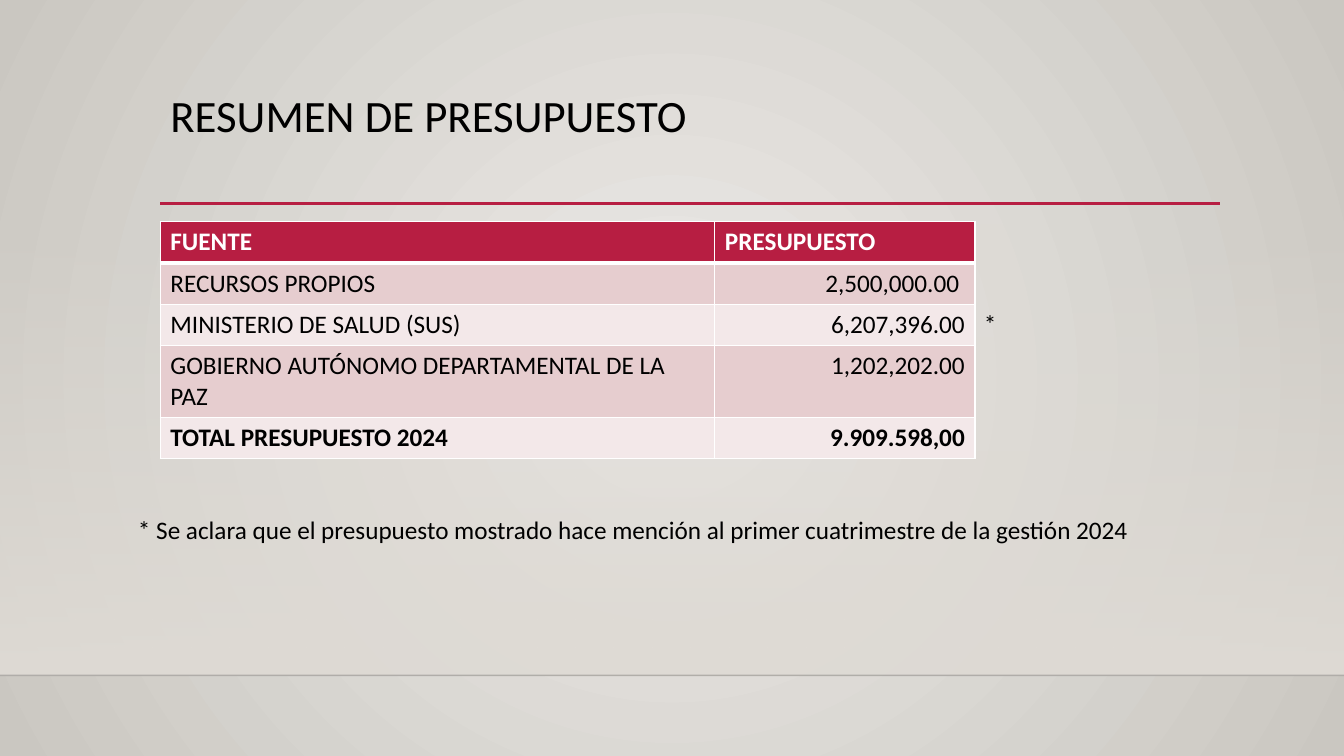
from lxml.etree import SubElement
from pptx import Presentation
from pptx.dml.color import RGBColor
from pptx.enum.shapes import MSO_CONNECTOR, MSO_SHAPE
from pptx.enum.text import MSO_ANCHOR, MSO_AUTO_SIZE, PP_ALIGN
from pptx.oxml.ns import qn
from pptx.util import Inches, Pt


def color(value):
    return RGBColor.from_string(value)


class BudgetSlide:
    font = "Calibri"
    black = "000000"
    white = "FFFFFF"
    accent = "B71E42"
    bands = ("E6CDCF", "F3E8E9")

    def __init__(self, presentation):
        self.slide = presentation.slides.add_slide(presentation.slide_layouts[5])

    def add_text(self, paragraph, text, size=18, ink=black, bold=False):
        run = paragraph.add_run()
        run.text = text
        run.font.name = self.font
        run.font.size = Pt(size)
        run.font.bold = bold
        run.font.color.rgb = color(ink)

    def set_gradient(self, fill, start, end):
        fill.gradient()
        for stop, value, position in zip(fill.gradient_stops, (start, end), (0, 1)):
            stop.color.rgb = color(value)
            stop.position = position

    def set_alpha(self, element, percent):
        rgb = next(element.iter(qn("a:srgbClr")))
        SubElement(rgb, qn("a:alpha"), val=str(percent * 1000))

    def background(self, center, edge):
        self.set_gradient(self.slide.background.fill, center, edge)
        gradient = next(self.slide.element.iter(qn("a:gradFill")))
        gradient.remove(gradient.find(qn("a:lin")))
        circle = SubElement(gradient, qn("a:path"), path="circle")
        SubElement(circle, qn("a:fillToRect"), l="50000", t="50000", r="50000", b="50000")

    def fading_panel(self, left, top, width, height, fill):
        shape = self.slide.shapes.add_shape(
            MSO_SHAPE.RECTANGLE, Inches(left), Inches(top), Inches(width), Inches(height))
        shape.shadow.inherit = False
        shape.line.fill.background()
        self.set_gradient(shape.fill, fill, fill)
        shape.fill.gradient_angle = 270
        self.set_alpha(shape.element.spPr, 0)

    def rule(self, left, right, top, ink, width, alpha=100):
        connector = self.slide.shapes.add_connector(
            MSO_CONNECTOR.STRAIGHT, Inches(left), Inches(top), Inches(right), Inches(top))
        connector.line.color.rgb = color(ink)
        connector.line.width = Pt(width)
        properties = connector.element.spPr
        if alpha < 100:
            self.set_alpha(properties, alpha)
        SubElement(properties, qn("a:effectLst"))

    def title(self, left, top, width, height, text):
        shape = self.slide.shapes.title
        shape.left, shape.top = Inches(left), Inches(top)
        shape.width, shape.height = Inches(width), Inches(height)
        frame = shape.text_frame
        frame.word_wrap = True
        frame.auto_size = MSO_AUTO_SIZE.NONE
        frame.vertical_anchor = MSO_ANCHOR.TOP
        paragraph = frame.paragraphs[0]
        paragraph.alignment = PP_ALIGN.LEFT
        paragraph.line_spacing = 0.9
        self.add_text(paragraph, text, size=32)

    def note(self, left, top, width, height, text):
        shape = self.slide.shapes.add_textbox(
            Inches(left), Inches(top), Inches(width), Inches(height))
        frame = shape.text_frame
        frame.word_wrap = False
        frame.auto_size = MSO_AUTO_SIZE.SHAPE_TO_FIT_TEXT
        self.add_text(frame.paragraphs[0], text)

    def cell_borders(self, cell, bottom):
        properties = cell._tc.get_or_add_tcPr()
        widths = {"a:lnL": 1, "a:lnR": 1, "a:lnT": 1, "a:lnB": bottom}
        for index, (tag, width) in enumerate(widths.items()):
            line = properties.makeelement(qn(tag), {"w": str(Pt(width))})
            fill = SubElement(line, qn("a:solidFill"))
            SubElement(fill, qn("a:srgbClr"), val=self.white)
            properties.insert(index, line)

    def table(self, left, top, widths, row_height, rows):
        table = self.slide.shapes.add_table(
            len(rows), len(widths), Inches(left), Inches(top),
            Inches(sum(widths)), Inches(row_height * len(rows))).table
        for column, width in zip(table.columns, widths):
            column.width = Inches(width)
        last = len(rows) - 1
        for row_index, values in enumerate(rows):
            table.rows[row_index].height = Inches(row_height)
            header = row_index == 0
            for column_index, text in enumerate(values):
                cell = table.cell(row_index, column_index)
                cell.fill.solid()
                cell.fill.fore_color.rgb = color(
                    self.accent if header else self.bands[(row_index - 1) % 2])
                paragraph = cell.text_frame.paragraphs[0]
                if column_index and not header:
                    paragraph.alignment = PP_ALIGN.RIGHT
                self.add_text(paragraph, text, ink=self.white if header else self.black,
                              bold=row_index in (0, last))
                self.cell_borders(cell, 3 if header else 1)


def main():
    presentation = Presentation()
    presentation.slide_width = Inches(13.33)
    presentation.slide_height = Inches(7.5)
    budget = BudgetSlide(presentation)
    budget.background("ECEAE7", "CAC7C1")
    budget.fading_panel(0, 2.21, 13.33, 4.49, "DFDBD5")
    budget.rule(0, 13.33, 6.7, "000001", 1, alpha=20)
    budget.rule(1.59, 12.1, 2.02, budget.accent, 2.5)
    budget.title(1.59, 0.88, 10.5, 1.15, "RESUMEN DE PRESUPUESTO")
    budget.table(1.59, 2.2, (5.5, 2.58), 0.41, [
        ("FUENTE", "PRESUPUESTO"),
        ("RECURSOS PROPIOS", "2,500,000.00 "),
        ("MINISTERIO DE SALUD (SUS)", "6,207,396.00"),
        ("GOBIERNO AUTÓNOMO DEPARTAMENTAL DE LA PAZ", "1,202,202.00"),
        ("TOTAL PRESUPUESTO 2024", "9.909.598,00"),
    ])
    budget.note(9.66, 3.01, 0.31, 0.4, "*")
    budget.note(1.27, 5.05, 10.12, 0.4,
                "* Se aclara que el presupuesto mostrado hace mención "
                "al primer cuatrimestre de la gestión 2024")
    presentation.save("out.pptx")


if __name__ == "__main__":
    main()
